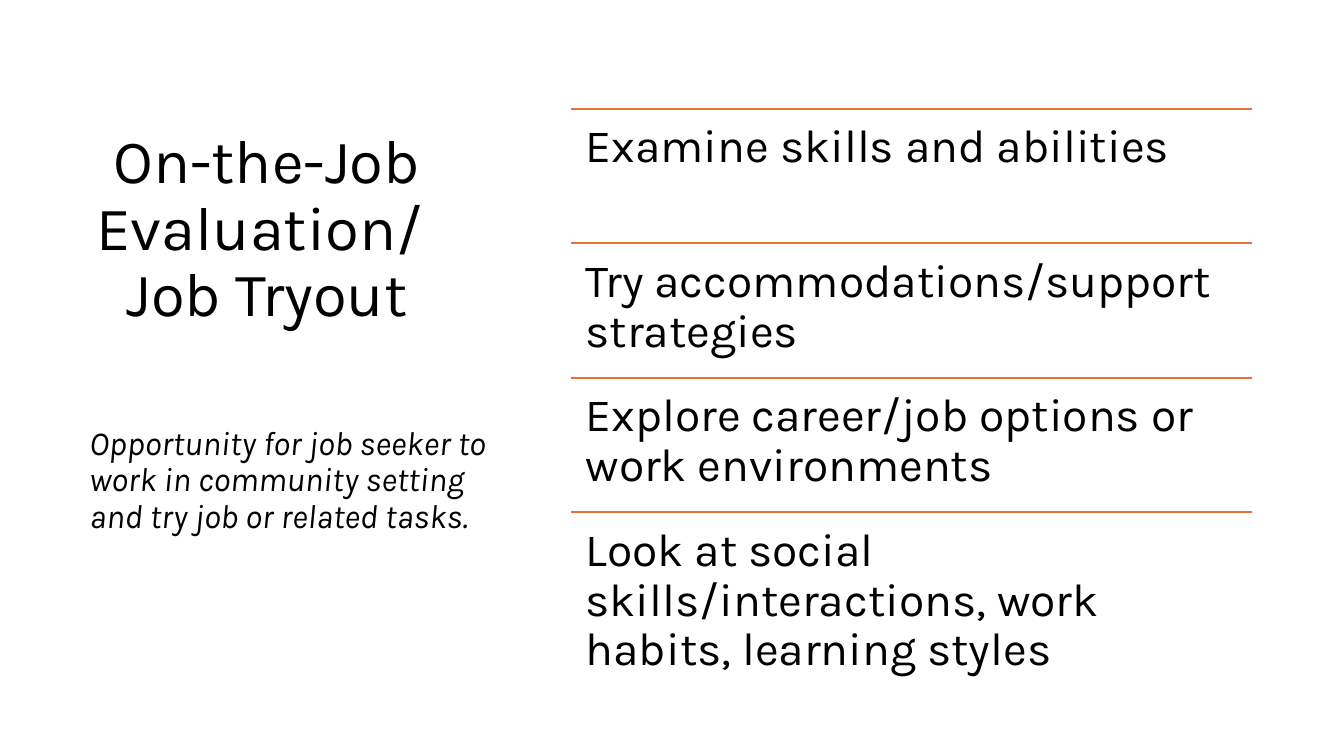
import pptx
import pptx.dml.color
import pptx.enum.shapes
import pptx.enum.text
import pptx.util
import lxml.etree
from pptx.oxml.ns import qn

Cm = pptx.util.Cm
Align = pptx.enum.text.PP_ALIGN
Anchor = pptx.enum.text.MSO_ANCHOR

FONT = "Karla"
INK = "000000"
RULE = "E97132"
GOALS = [
    "Examine skills and abilities",
    "Try accommodations/support strategies",
    "Explore career/job options or work environments",
    "Look at social skills/interactions, work habits, learning styles",
]


def paint(target, color):
    target.rgb = pptx.dml.color.RGBColor.from_string(color)


def place(shape, left, top, width, height):
    shape.left, shape.top = Cm(left), Cm(top)
    shape.width, shape.height = Cm(width), Cm(height)


def write(shape, text, size, align=Align.LEFT, anchor=Anchor.TOP, italic=False):
    frame = shape.text_frame
    frame.text = text
    frame.word_wrap = True
    frame.auto_size = pptx.enum.text.MSO_AUTO_SIZE.NONE
    frame.vertical_anchor = anchor
    for para in frame.paragraphs:
        para.alignment = align
        para.line_spacing = 0.9
        para.space_before = pptx.util.Pt(0)
        for run in para.runs:
            run.font.name = FONT
            run.font.size = pptx.util.Pt(size)
            run.font.italic = italic
            paint(run.font.color, INK)


def clear_bullets(shape):
    for para in shape.text_frame.paragraphs:
        props = para._p.get_or_add_pPr()
        props.set("marL", "0")
        props.set("indent", "0")
        lxml.etree.SubElement(props, qn("a:buNone"))


def add_title(slide, *box):
    title = slide.shapes.title
    place(title, *box)
    write(title, "On-the-Job Evaluation/ \vJob Tryout", 44,
          Align.CENTER, Anchor.BOTTOM)


def add_intro(slide, *box):
    intro = slide.placeholders[1]
    place(intro, *box)
    write(intro, "Opportunity for job seeker to work in community setting "
          "and try job or related tasks.", 24, italic=True)
    clear_bullets(intro)


def add_rule(slide, left, top, width):
    rule = slide.shapes.add_connector(
        pptx.enum.shapes.MSO_CONNECTOR.STRAIGHT,
        Cm(left), Cm(top), Cm(left + width), Cm(top))
    rule.line.width = pptx.util.Pt(1.5)
    paint(rule.line.color, RULE)
    lxml.etree.SubElement(rule._element.spPr, qn("a:effectLst"))


def add_goals(slide, left, top, width, height):
    """Stack the goals in equal rows, each under a rule."""
    step = height / len(GOALS)
    for row, goal in enumerate(GOALS):
        y = top + row * step
        add_rule(slide, left, y, width)
        label = slide.shapes.add_textbox(Cm(left), Cm(y), Cm(width), Cm(step))
        frame = label.text_frame
        frame.margin_left = frame.margin_right = Cm(0.36)
        frame.margin_top = frame.margin_bottom = Cm(0.36)
        write(label, goal, 33)


def main():
    deck = pptx.Presentation()
    deck.slide_width, deck.slide_height = Cm(33.87), Cm(19.05)
    slide = deck.slides.add_slide(deck.slide_layouts[1])
    add_title(slide, -0.46, 1.45, 14.38, 6.99)
    add_intro(slide, 2, 10.62, 10.92, 6.22)
    add_goals(slide, 14.4, 2.74, 17.15, 13.55)
    deck.save("out.pptx")


if __name__ == "__main__":
    main()
